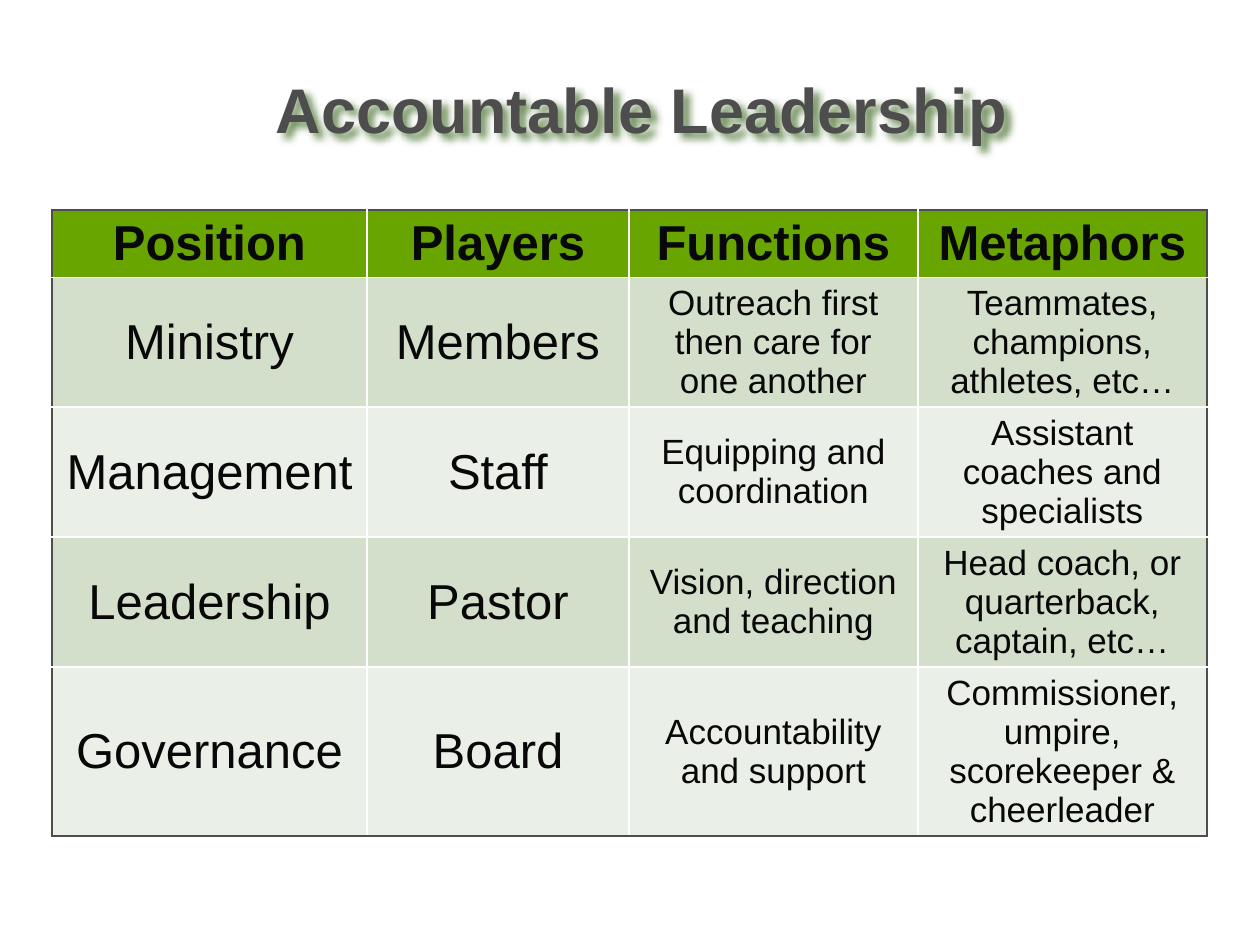
"""Build the Accountable Leadership slide with its table of roles."""
from pptx import Presentation
from pptx import util as u
from pptx.dml.color import RGBColor
from pptx.enum import text
from pptx.oxml import parse_xml
from pptx.oxml.ns import nsdecls

PX = 914400 // 126
GRAY, WHITE, BLACK = "4D4D4D", "FFFFFF", "080808"
COLS = [315, 262, 289, 289]
ROWS = [67, 130, 130, 130, 168]
FILLS = ["68A500", "D3DECB", "EAEFE7", "D3DECB", "EAEFE7"]
DATA = [
    ["Position", "Players", "Functions", "Metaphors"],
    ["Ministry", "Members", "Outreach first then care for one another",
     "Teammates, champions, athletes, etc…"],
    ["Management", "Staff", "Equipping and coordination",
     "Assistant coaches and specialists"],
    ["Leadership", "Pastor", "Vision, direction and teaching",
     "Head coach, or quarterback, captain, etc…"],
    ["Governance", "Board", "Accountability and support",
     "Commissioner, umpire, scorekeeper & cheerleader"],
]


def rgb(code):
    return RGBColor.from_string(code)


def style(para, size, color, bold, align):
    para.alignment = align
    font = para.font
    font.name, font.size, font.bold = "Arial", u.Pt(size), bold
    font.color.rgb = rgb(color)


deck = Presentation()
deck.slide_width, deck.slide_height = 1260 * PX, 945 * PX
slide = deck.slides.add_slide(deck.slide_layouts[5])

title = slide.shapes.title
title.left, title.top, title.width, title.height = [n * PX for n in (263, 26, 973, 164)]
title.fill.background()
title.text_frame.text = "Accountable Leadership"
title.text_frame.vertical_anchor = text.MSO_ANCHOR.MIDDLE
style(title.text_frame.paragraphs[0], 36, GRAY, True, text.PP_ALIGN.LEFT)
title.element.spPr.append(parse_xml(
    f'<a:effectLst {nsdecls("a")}><a:outerShdw blurRad="50800" dist="50800" '
    'dir="2700000" algn="tl"><a:srgbClr val="6F8F5A"/></a:outerShdw></a:effectLst>'))

frame = slide.shapes.add_table(len(ROWS), len(COLS), 52 * PX, 210 * PX,
                               sum(COLS) * PX, sum(ROWS) * PX)
table = frame.table
for col, wide in zip(table.columns, COLS):
    col.width = wide * PX
for row, high in zip(table.rows, ROWS):
    row.height = high * PX

for r, line in enumerate(DATA):
    for c, words in enumerate(line):
        cell = table.cell(r, c)
        cell.text = words
        cell.vertical_anchor = text.MSO_ANCHOR.MIDDLE
        size = 20 if r > 0 and c > 1 else 28
        style(cell.text_frame.paragraphs[0], size, BLACK, r == 0, text.PP_ALIGN.CENTER)
        outer = {"L": c == 0, "R": c == len(COLS) - 1,
                 "T": r == 0, "B": r == len(ROWS) - 1}
        props = cell._tc.get_or_add_tcPr()
        for side, edge in outer.items():
            props.append(parse_xml(
                f'<a:ln{side} {nsdecls("a")} w="12700"><a:solidFill>'
                f'<a:srgbClr val="{GRAY if edge else WHITE}"/></a:solidFill></a:ln{side}>'))
        cell.fill.solid()
        cell.fill.fore_color.rgb = rgb(FILLS[r])

deck.save("out.pptx")
